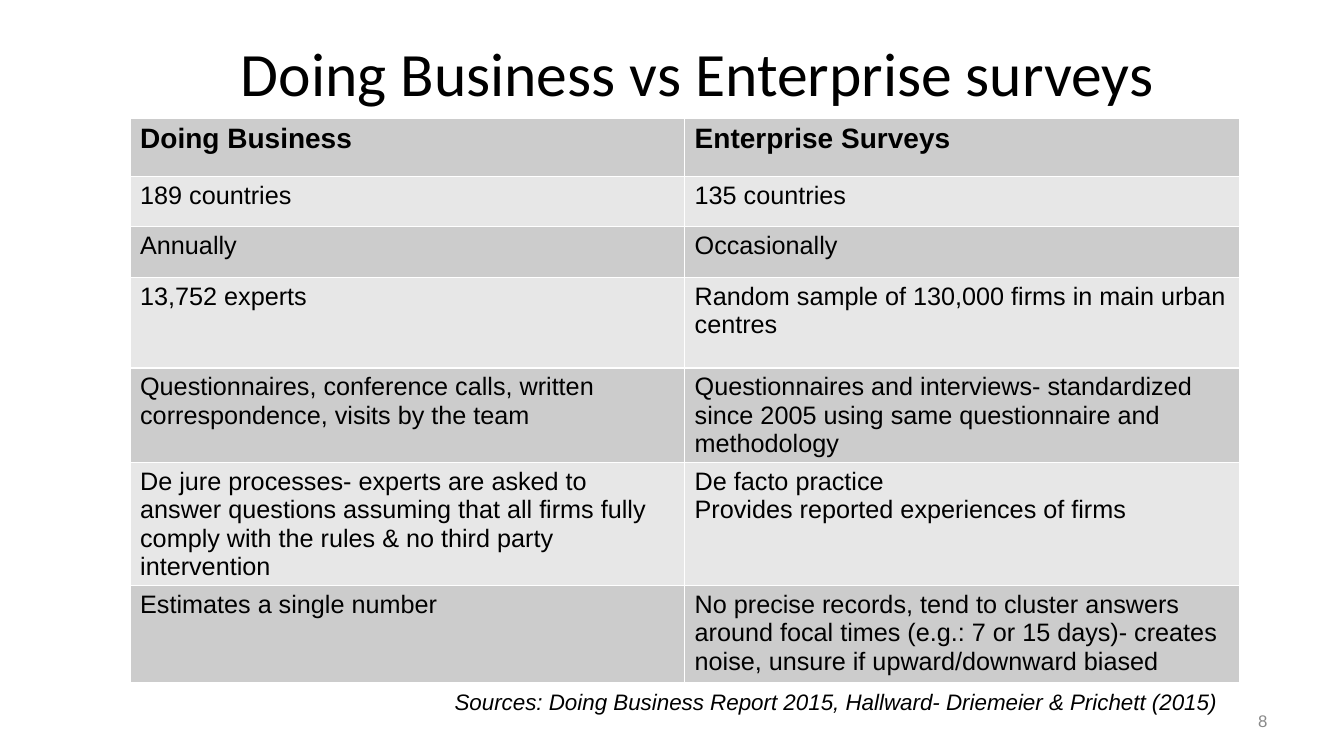
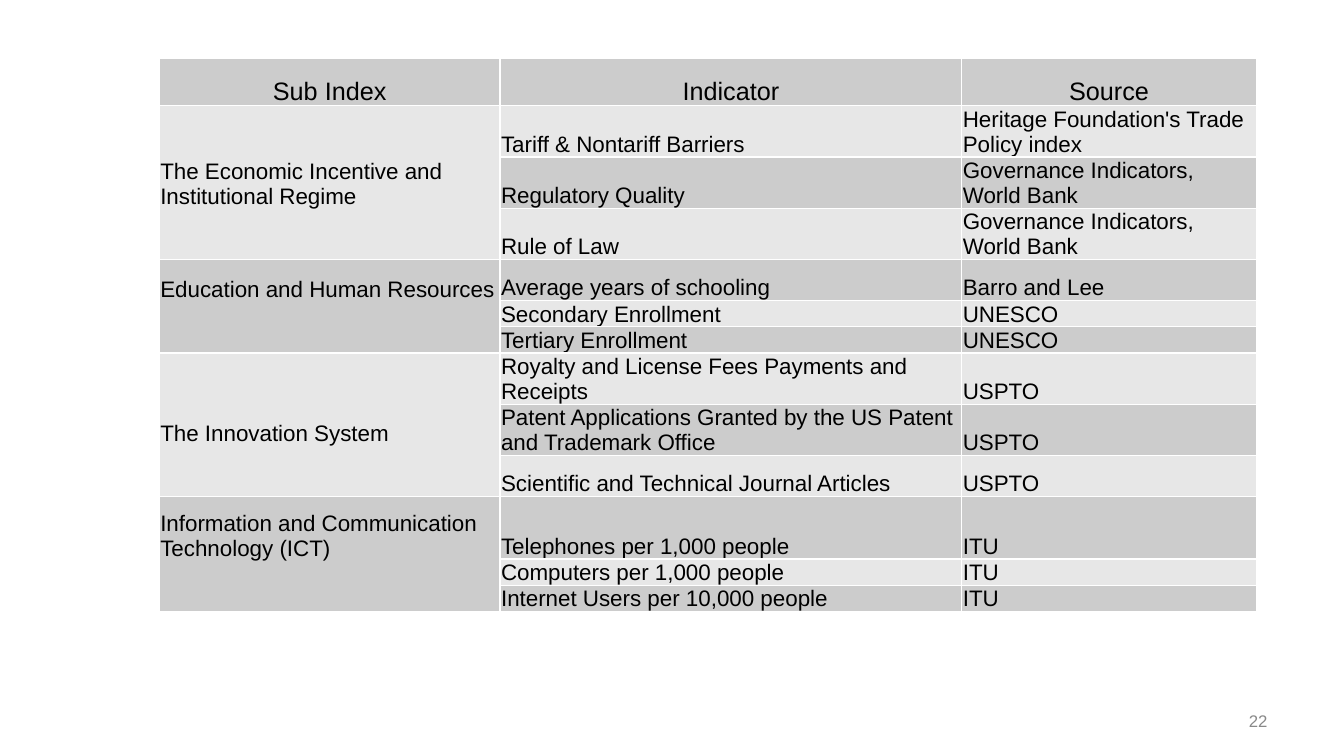
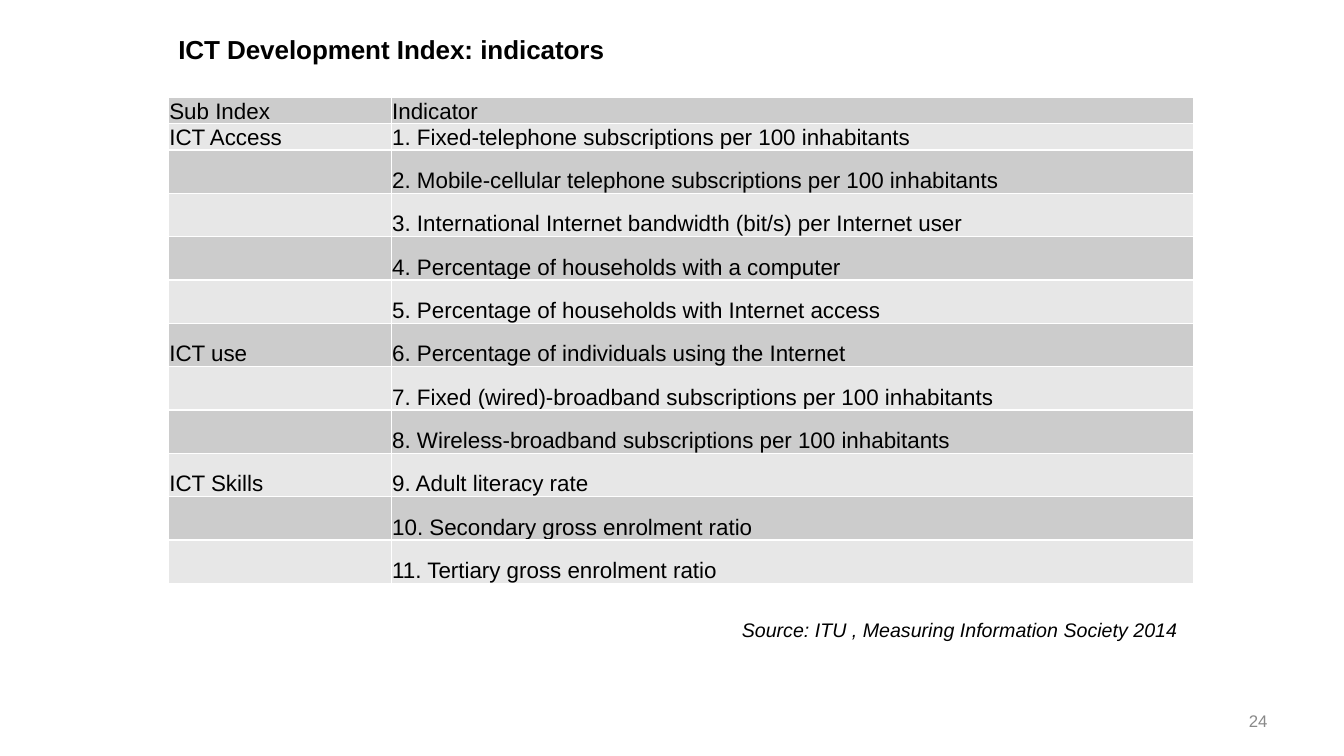
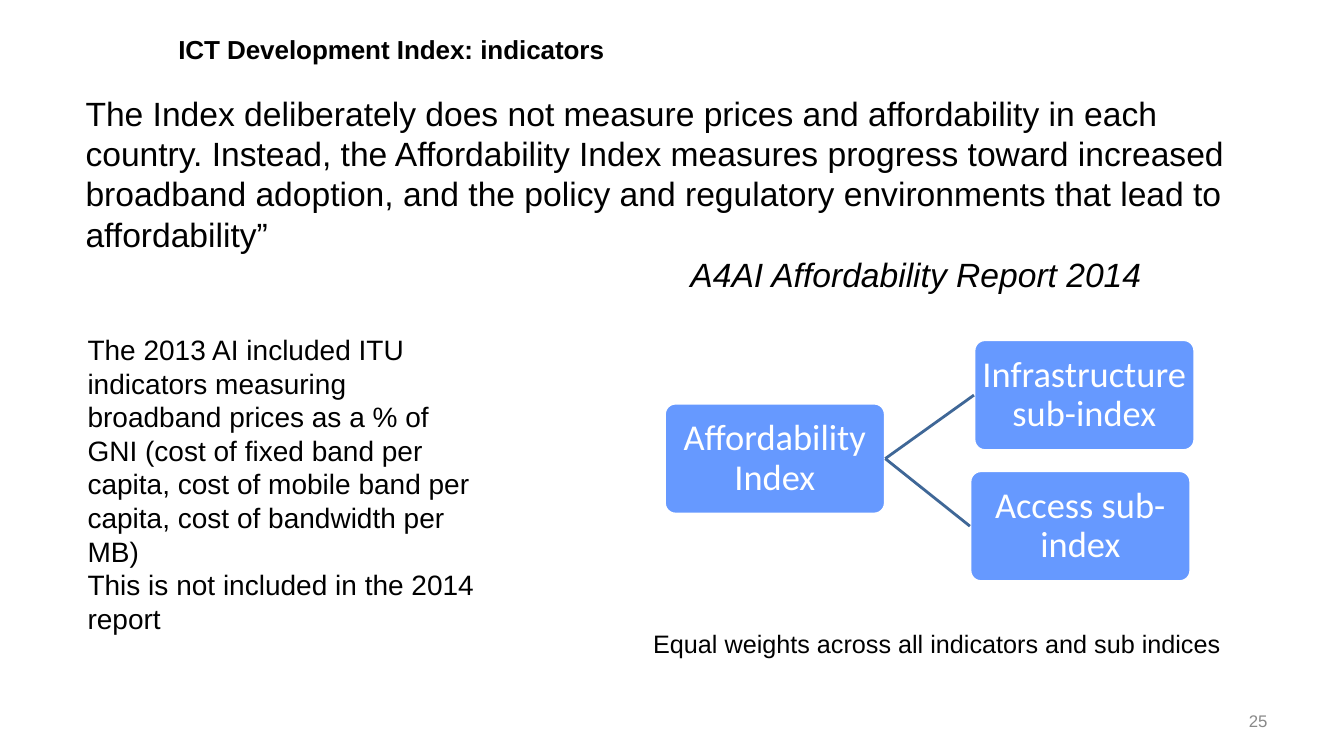
from lxml import etree
from pptx import Presentation
from pptx.dml.color import RGBColor
from pptx.enum.shapes import MSO_CONNECTOR, MSO_SHAPE
from pptx.enum.text import MSO_ANCHOR, PP_ALIGN
from pptx.oxml.ns import qn
from pptx.util import Inches, Pt

LEFT, CENTER, RIGHT = PP_ALIGN.LEFT, PP_ALIGN.CENTER, PP_ALIGN.RIGHT
TOP, MIDDLE, BOTTOM = MSO_ANCHOR.TOP, MSO_ANCHOR.MIDDLE, MSO_ANCHOR.BOTTOM
ROUNDED, STRAIGHT = MSO_SHAPE.ROUNDED_RECTANGLE, MSO_CONNECTOR.STRAIGHT

BLACK = RGBColor(0x00, 0x00, 0x00)
WHITE = RGBColor(0xFF, 0xFF, 0xFF)
GREY = RGBColor(0x89, 0x89, 0x89)
BANDS = [RGBColor(0xCC, 0xCC, 0xCC), RGBColor(0xE7, 0xE7, 0xE7)]
BLUE = RGBColor(0x66, 0x99, 0xFF)
LINK = RGBColor(0x3F, 0x67, 0x97)


def write(tf, text, size, color=BLACK, font="Arial", bold=False, italic=False,
          align=LEFT, spacing=None):
    tf.word_wrap = True
    for i, line in enumerate(text.split("\n")):
        p = tf.paragraphs[0] if i == 0 else tf.add_paragraph()
        p.alignment = align
        p.line_spacing = spacing
        r = p.add_run()
        r.text = line
        r.font.size = Pt(size)
        r.font.name = font
        r.font.bold = bold
        r.font.italic = italic
        r.font.color.rgb = color
    return p


def add_text(s, box, text, size, anchor=TOP, **style):
    tf = s.shapes.add_textbox(*[Inches(v) for v in box]).text_frame
    tf.vertical_anchor = anchor
    return write(tf, text, size, **style)


prs = Presentation()
prs.slide_width, prs.slide_height = Inches(13.33), Inches(7.5)
slides = []
for number in (8, 22, 24, 25):
    s = prs.slides.add_slide(prs.slide_layouts[6])
    add_text(s, (9.56, 6.95, 3.11, 0.4), str(number), 12, MIDDLE, color=GREY, align=RIGHT)
    slides.append(s)
surveys, knowledge, ict, affordability = slides

add_text(surveys, (1.67, 0, 10.5, 1.42), "Doing Business vs Enterprise surveys", 44,
         MIDDLE, font="Calibri", align=CENTER)
for s in (ict, affordability):
    p = add_text(s, (1.67, 0.23, 5.11, 0.64), "ICT Development Index: indicators", 32, bold=True)
    p.runs[0].font._element.set("baseline", "30000")

survey_rows = [
    ("Doing Business", "Enterprise Surveys"),
    ("189 countries", "135 countries"),
    ("Annually", "Occasionally"),
    ("13,752 experts", "Random sample of 130,000 firms in main urban centres"),
    ("Questionnaires, conference calls, written correspondence, visits by the team",
     "Questionnaires and interviews- standardized since 2005 using same questionnaire and methodology"),
    ("De jure processes- experts are asked to answer questions assuming that all firms fully "
     "comply with the rules & no third party intervention",
     "De facto practice\nProvides reported experiences of firms"),
    ("Estimates a single number",
     "No precise records, tend to cluster answers around focal times (e.g.: 7 or 15 days)- "
     "creates noise, unsure if upward/downward biased"),
]
knowledge_rows = [
    ("Sub Index", "Indicator", "Source"),
    ("The Economic Incentive and Institutional Regime", "Tariff & Nontariff Barriers",
     "Heritage Foundation's Trade Policy index"),
    ("", "Regulatory Quality", "Governance Indicators, World Bank"),
    ("", "Rule of Law", "Governance Indicators, World Bank"),
    ("Education and Human Resources", "Average years of schooling", "Barro and Lee"),
    ("", "Secondary Enrollment", "UNESCO"),
    ("", "Tertiary Enrollment", "UNESCO"),
    ("The Innovation System", "Royalty and License Fees Payments and Receipts", "USPTO"),
    ("", "Patent Applications Granted by the US Patent and Trademark Office", "USPTO"),
    ("", "Scientific and Technical Journal Articles", "USPTO"),
    ("Information and Communication Technology (ICT)", "Telephones per 1,000 people", "ITU"),
    ("", "Computers per 1,000 people", "ITU"),
    ("", "Internet Users per 10,000 people", "ITU"),
]
ict_rows = [
    ("Sub Index", "Indicator"),
    ("ICT Access", "1. Fixed-telephone subscriptions per 100 inhabitants"),
    ("", "2. Mobile-cellular telephone subscriptions per 100 inhabitants"),
    ("", "3. International Internet bandwidth (bit/s) per Internet user"),
    ("", "4. Percentage of households with a computer"),
    ("", "5. Percentage of households with Internet access"),
    ("ICT use", "6. Percentage of individuals using the Internet"),
    ("", "7. Fixed (wired)-broadband subscriptions per 100 inhabitants"),
    ("", "8. Wireless-broadband subscriptions per 100 inhabitants"),
    ("ICT Skills", "9. Adult literacy rate"),
    ("", "10. Secondary gross enrolment ratio"),
    ("", "11. Tertiary gross enrolment ratio"),
]

roomy = {"anchor": TOP, "margins": (0.1, 0.05, 0.1, 0.05)}
tight = {"anchor": BOTTOM, "margins": (0.01, 0.01, 0.01, 0)}
tables = [
    (surveys, 1.29, 1.17, [5.5, 5.5], [0.58, 0.5, 0.5, 0.9, 0.84, 0.96, 0.96], survey_rows,
     roomy, {"size": 20, "bold": True}, 18),
    (knowledge, 1.58, 0.58, [3.38, 4.58, 2.92],
     [0.47] * 4 + [0.41, 0.24, 0.24, 0.41, 0.47, 0.41, 0.62, 0.24, 0.24], knowledge_rows,
     tight, {"size": 18, "align": CENTER}, 16),
    (ict, 1.67, 0.97, [2.21, 7.96], [0.23] * 2 + [0.43] * 10, ict_rows,
     tight, {"size": 16}, 16),
]
for s, x, y, widths, heights, rows, layout, header, size in tables:
    tbl = s.shapes.add_table(len(heights), len(widths), Inches(x), Inches(y),
                             Inches(sum(widths)), Inches(sum(heights))).table
    tbl.first_row = tbl.horz_banding = False
    for col, width in zip(tbl.columns, widths):
        col.width = Inches(width)
    for i, (row, height) in enumerate(zip(rows, heights)):
        tbl.rows[i].height = Inches(height)
        style = header if i == 0 else {"size": size}
        for j, text in enumerate(row):
            cell = tbl.cell(i, j)
            tcPr = cell._tc.get_or_add_tcPr()
            for side in ("lnL", "lnR", "lnT", "lnB"):
                ln = etree.SubElement(tcPr, qn(f"a:{side}"), w=str(Pt(1)))
                fill = etree.SubElement(ln, qn("a:solidFill"))
                etree.SubElement(fill, qn("a:srgbClr"), val=str(WHITE))
            cell.fill.solid()
            cell.fill.fore_color.rgb = BANDS[i % 2]
            cell.vertical_anchor = layout["anchor"]
            (cell.margin_left, cell.margin_top, cell.margin_right,
             cell.margin_bottom) = [Inches(v) for v in layout["margins"]]
            if text:
                write(cell.text_frame, text, spacing=Pt(1.12 * style["size"]), **style)
    if s is knowledge:
        for i in range(1, len(rows), 3):
            tbl.cell(i, 0).merge(tbl.cell(i + 2, 0))
            tbl.cell(i, 0).margin_bottom = Inches(0.5)

add_text(surveys, (4.41, 6.78, 8.05, 0.37),
         "Sources: Doing Business Report 2015, Hallward- Driemeier & Prichett (2015)", 16, italic=True)
add_text(ict, (6.25, 6.08, 5.53, 0.34), "Source: ITU , Measuring Information Society 2014", 14,
         italic=True, align=RIGHT)

s = affordability
p = add_text(s, (0.75, 0.87, 11.56, 2.12),
             "The Index deliberately does not measure prices and affordability in each country. "
             "Instead, the Affordability Index measures progress toward increased broadband adoption, "
             "and the policy and regulatory environments that lead to affordability”\n"
             "A4AI Affordability Report 2014", 24)
p.runs[0].font.italic = True
p._p.get_or_add_pPr().set("marL", str(Inches(6)))
add_text(s, (0.77, 3.25, 4.06, 3.13),
         "The 2013 AI included ITU indicators measuring broadband prices as a % of GNI "
         "(cost of fixed band per capita, cost of mobile band per capita, cost of bandwidth per MB)\n"
         "This is not included in the 2014 report", 20)

nodes = []
for x, y, text in ((6.59, 4, "Affordability Index"),
                   (9.66, 3.37, "Infrastructure sub-index"),
                   (9.62, 4.67, "Access sub-index")):
    sp = s.shapes.add_shape(ROUNDED, Inches(x), Inches(y), Inches(2.19), Inches(1.1))
    sp.adjustments[0] = 0.1
    sp.shadow.inherit = False
    sp.fill.solid()
    sp.fill.fore_color.rgb = BLUE
    sp.line.color.rgb = WHITE
    sp.line.width = Pt(2)
    tf = sp.text_frame
    tf.margin_left = tf.margin_top = tf.margin_right = tf.margin_bottom = Inches(0.02)
    tf.vertical_anchor = MIDDLE
    write(tf, text, 26, color=WHITE, font="Calibri", align=CENTER, spacing=0.9)
    nodes.append(sp)
for node in nodes[1:]:
    link = s.shapes.add_connector(STRAIGHT, 0, 0, 0, 0)
    link.begin_connect(nodes[0], 3)
    link.end_connect(node, 1)
    link.line.color.rgb = LINK
    link.line.width = Pt(2)
    etree.SubElement(link._element.spPr, qn("a:effectLst"))

add_text(s, (6.38, 6.18, 5.93, 0.4), "Equal weights across all indicators and sub indices", 18)

prs.save("out.pptx")
